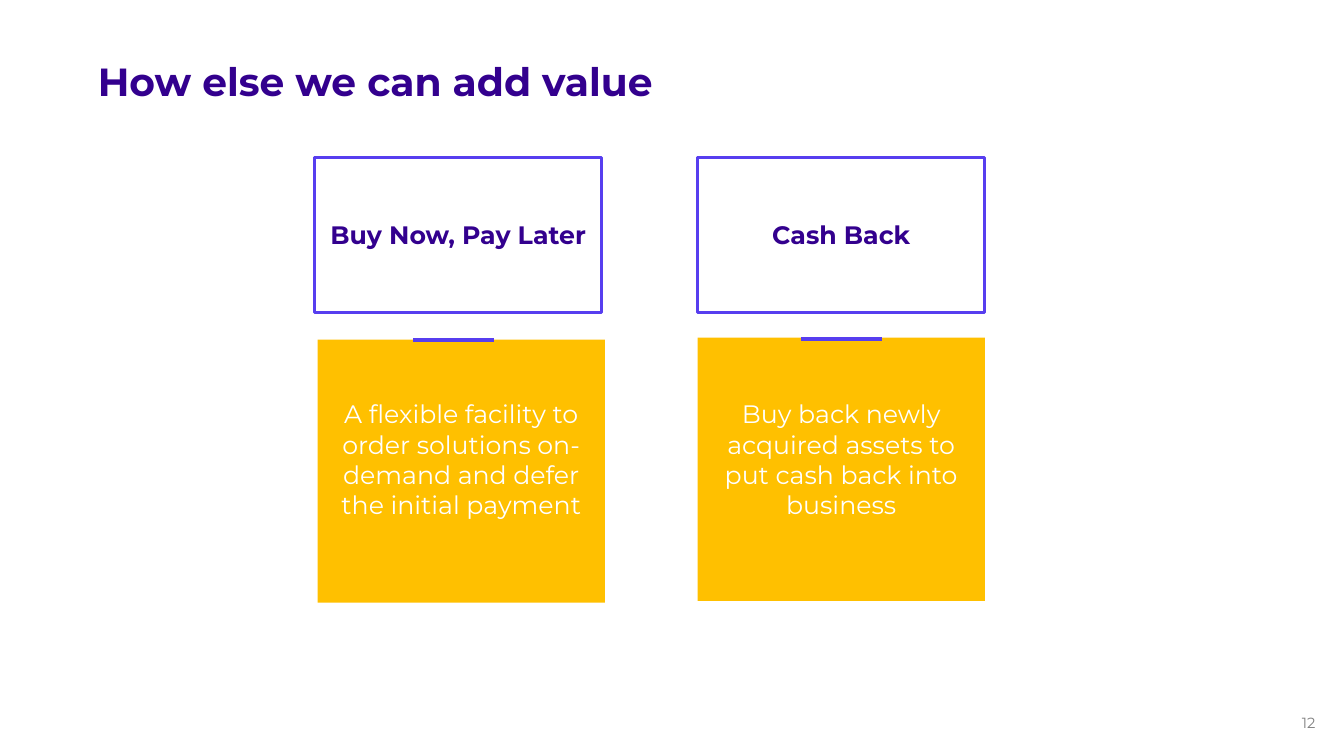
"""Build the slide that presents two further ways of adding value."""
from dataclasses import dataclass

from lxml.etree import SubElement
from pptx import Presentation
from pptx.dml.color import RGBColor
from pptx.enum.shapes import MSO_CONNECTOR as Connector
from pptx.enum.shapes import MSO_SHAPE as Preset
from pptx.enum.text import MSO_ANCHOR as Anchor
from pptx.enum.text import MSO_AUTO_SIZE as AutoSize
from pptx.enum.text import PP_ALIGN as Align
from pptx.oxml.ns import qn
from pptx.shapes.autoshape import Shape
from pptx.slide import Slide
from pptx.text.text import TextFrame
from pptx.util import Inches, Length, Pt

WIDTH, HEIGHT = Inches(13.33), Inches(7.5)
FONT = "Montserrat"
COLOURS = {
    "title": "33008E",
    "accent": "573EEF",
    "panel": "FFC000",
    "light": "FFFFFF",
    "number": "808080",
}
CARD_WIDTH = 21.38
HEADER_TOP, HEADER_HEIGHT = 20.8, 20.53
PANEL_HEIGHT = 34.8
BODY_INSET, BODY_TOP, BODY_HEIGHT = 0.75, 52.67, 16.13
ACCENT_WIDTH = 6


@dataclass(frozen=True)
class Offer:
    heading: str
    body: str
    header_left: float
    panel_left: float
    panel_top: float
    accent_left: float
    accent_top: float


OFFERS = [
    Offer("Buy Now, Pay Later",
          "A flexible facility to order solutions on-demand and defer the initial payment",
          23.4, 23.63, 44.93, 30.75, 44.93),
    Offer("Cash Back",
          "Buy back newly acquired assets to put cash back into business",
          51.9, 51.9, 44.67, 59.63, 44.8),
]


def across(percent: float) -> Length:
    """Turn a percentage of the slide's width into a length."""
    return Length(round(WIDTH * percent / 100))


def down(percent: float) -> Length:
    """Turn a percentage of the slide's height into a length."""
    return Length(round(HEIGHT * percent / 100))


def area(left: float, top: float, width: float, height: float) -> tuple[Length, ...]:
    """Turn four percentages into a position and a size."""
    return across(left), down(top), across(width), down(height)


def colour(name: str) -> RGBColor:
    """Look up a named colour."""
    return RGBColor.from_string(COLOURS[name])


def write(frame: TextFrame, text: str, size: float, ink: str, bold: bool = False,
          align: Align = Align.CENTER, anchor: Anchor = Anchor.MIDDLE,
          insets: tuple[float, ...] = (0, 0, 0, 0), wrap: bool = True) -> None:
    """Fill a frame with one formatted paragraph."""
    frame.text = text
    frame.auto_size = AutoSize.NONE
    frame.word_wrap = wrap
    frame.vertical_anchor = anchor
    (frame.margin_left, frame.margin_top,
     frame.margin_right, frame.margin_bottom) = map(Inches, insets)
    para = frame.paragraphs[0]
    para.alignment = align
    para.font.name = FONT
    para.font.size = Pt(size)
    para.font.bold = bold
    para.font.color.rgb = colour(ink)


def add_box(page: Slide, place: tuple[Length, ...]) -> Shape:
    """Add a rectangle without a shadow."""
    box = page.shapes.add_shape(Preset.RECTANGLE, *place)
    box.shadow.inherit = False
    return box


def add_accent(page: Slide, left: float, top: float) -> None:
    """Add the short rule on the upper edge of a panel."""
    accent = page.shapes.add_connector(
        Connector.STRAIGHT, across(left), down(top), across(left + ACCENT_WIDTH), down(top))
    accent.line.color.rgb = colour("accent")
    accent.line.width = Pt(3)
    SubElement(accent.element.spPr, qn("a:effectLst"))


def add_offer(page: Slide, offer: Offer) -> None:
    """Draw an outlined heading above a filled panel with its text."""
    panel = add_box(page, area(offer.panel_left, offer.panel_top, CARD_WIDTH, PANEL_HEIGHT))
    panel.fill.solid()
    panel.fill.fore_color.rgb = colour("panel")
    panel.line.fill.background()

    header = add_box(page, area(offer.header_left, HEADER_TOP, CARD_WIDTH, HEADER_HEIGHT))
    header.fill.background()
    header.line.color.rgb = colour("accent")
    header.line.width = Pt(2)
    write(header.text_frame, offer.heading, 18, "title", bold=True)

    body = page.shapes.add_textbox(*area(
        offer.panel_left + BODY_INSET, BODY_TOP, CARD_WIDTH - 2 * BODY_INSET, BODY_HEIGHT))
    write(body.text_frame, offer.body, 18, "light")
    add_accent(page, offer.accent_left, offer.accent_top)


def main() -> None:
    """Build and save the deck."""
    deck = Presentation()
    deck.slide_width, deck.slide_height = WIDTH, HEIGHT
    page = deck.slides.add_slide(deck.slide_layouts[5])

    title = page.shapes.title
    title.left, title.top, title.width, title.height = area(7.28, 8.27, 90.6, 12.53)
    write(title.text_frame, "How else we can add value", 28, "title", bold=True,
          align=Align.LEFT, anchor=Anchor.TOP, insets=(0, 0, 0.1, 0.05))
    title.text_frame.paragraphs[0].line_spacing = 0.9

    for offer in OFFERS:
        add_offer(page, offer)

    number = page.shapes.add_textbox(*area(95.33, 93.73, 2.85, 3.6))
    write(number.text_frame, "12", 10.5, "number", align=Align.RIGHT,
          insets=(0.1, 0.05, 0.04, 0.05), wrap=False)
    deck.save("out.pptx")


if __name__ == "__main__":
    main()
